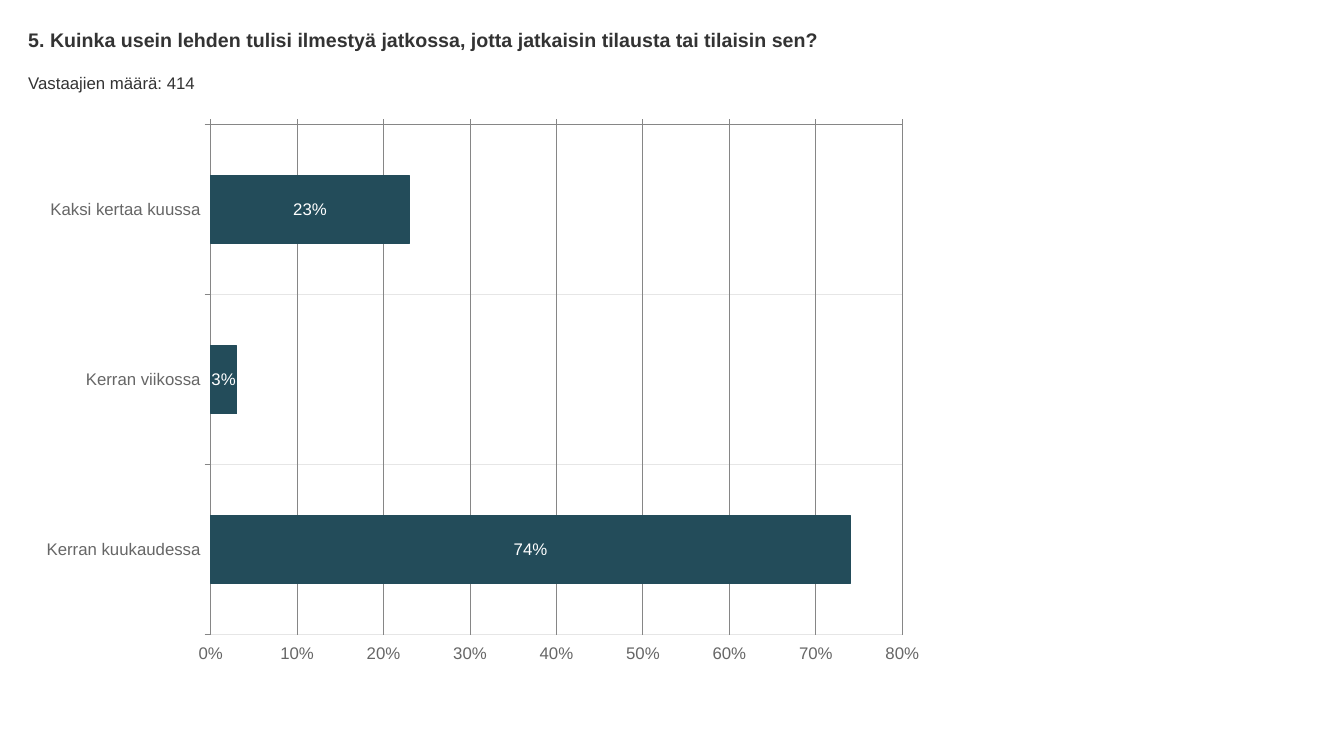
import pptx
import pptx.chart.data
import pptx.dml.color
import pptx.enum.chart
import pptx.enum.text
import pptx.oxml
import pptx.oxml.ns
import pptx.util
from pptx.util import Inches

RGBColor = pptx.dml.color.RGBColor
TEXT = RGBColor(0x33, 0x33, 0x33)
AXIS_TEXT = RGBColor(0x66, 0x66, 0x66)
AXIS_LINE = RGBColor(0x86, 0x86, 0x86)
PALE_GRID = RGBColor(0xE6, 0xE6, 0xE6)
TEAL = RGBColor(0x23, 0x4C, 0x5A)
WHITE = RGBColor(0xFF, 0xFF, 0xFF)

QUESTION = "5. Kuinka usein lehden tulisi ilmestyä jatkossa, jotta jatkaisin tilausta tai tilaisin sen?"
RESPONDENTS = "Vastaajien määrä: 414"
ANSWERS = [
    ("Kaksi kertaa kuussa", 0.23),
    ("Kerran viikossa", 0.03),
    ("Kerran kuukaudessa", 0.74),
]
LEFT = 0.28
TEXT_WIDTH = 12.78
CHART_BOX = (LEFT, 1.13, 9.03, 5.56)
PLOT_BOX = (2.09, 1.24, 6.86, 5.06)


def set_font(font, size, color, bold=False):
    font.name = "Arial"
    font.size = pptx.util.Pt(size)
    font.bold = bold
    font.color.rgb = color


def write_line(box, top, height, text, size, bold=False):
    box.left, box.top = Inches(LEFT), Inches(top)
    box.width, box.height = Inches(TEXT_WIDTH), Inches(height)
    frame = box.text_frame
    frame.margin_left = frame.margin_top = frame.margin_right = frame.margin_bottom = 0
    frame.word_wrap = True
    frame.auto_size = pptx.enum.text.MSO_AUTO_SIZE.SHAPE_TO_FIT_TEXT
    frame.vertical_anchor = pptx.enum.text.MSO_ANCHOR.TOP
    paragraph = frame.paragraphs[0]
    paragraph.alignment = pptx.enum.text.PP_ALIGN.LEFT
    paragraph.line_spacing = 1.0
    paragraph.space_before = pptx.util.Pt(0)
    run = paragraph.add_run()
    run.text = text
    set_font(run.font, size, TEXT, bold)


def style_axis(axis, label_position, grid_color):
    axis.tick_label_position = label_position
    axis.major_tick_mark = pptx.enum.chart.XL_TICK_MARK.OUTSIDE
    axis.minor_tick_mark = pptx.enum.chart.XL_TICK_MARK.NONE
    axis.has_major_gridlines = True
    set_font(axis.tick_labels.font, 12, AXIS_TEXT)
    for line, color in ((axis.format.line, AXIS_LINE), (axis.major_gridlines.format.line, grid_color)):
        line.color.rgb = color
        line.width = pptx.util.Pt(0.75)


def place_plot(chart):
    chart_left, chart_top, chart_width, chart_height = CHART_BOX
    left, top, width, height = PLOT_BOX
    fractions = {
        "x": (left - chart_left) / chart_width,
        "y": (top - chart_top) / chart_height,
        "w": width / chart_width,
        "h": height / chart_height,
    }
    modes = '<c:layoutTarget val="inner"/><c:xMode val="edge"/><c:yMode val="edge"/>'
    values = "".join(f'<c:{key} val="{value:.4f}"/>' for key, value in fractions.items())
    layout = pptx.oxml.parse_xml(
        f'<c:layout {pptx.oxml.ns.nsdecls("c")}><c:manualLayout>{modes}{values}</c:manualLayout></c:layout>'
    )
    plot_area = chart.element.find(".//" + pptx.oxml.ns.qn("c:plotArea"))
    for old_layout in plot_area.findall(pptx.oxml.ns.qn("c:layout")):
        plot_area.remove(old_layout)
    plot_area.insert(0, layout)


def add_answer_chart(slide):
    data = pptx.chart.data.CategoryChartData(number_format="0%")
    data.categories = [answer for answer, share in ANSWERS]
    data.add_series("Series 1", [share for answer, share in ANSWERS])
    chart = slide.shapes.add_chart(
        pptx.enum.chart.XL_CHART_TYPE.BAR_CLUSTERED, *map(Inches, CHART_BOX), data
    ).chart
    chart.has_legend = False
    chart.has_title = False
    chart.font.name = "Calibri"
    chart.font.size = pptx.util.Pt(14)

    positions = pptx.enum.chart.XL_TICK_LABEL_POSITION
    style_axis(chart.category_axis, positions.LOW, PALE_GRID)
    chart.category_axis.reverse_order = True
    style_axis(chart.value_axis, positions.HIGH, AXIS_LINE)
    chart.value_axis.minimum_scale = 0
    chart.value_axis.maximum_scale = 0.8
    chart.value_axis.major_unit = 0.1
    chart.value_axis.tick_labels.number_format = "0%"
    chart.value_axis.tick_labels.number_format_is_linked = False

    plot = chart.plots[0]
    plot.gap_width = 150
    plot.vary_by_categories = False
    shares = plot.series[0]
    shares.format.fill.solid()
    shares.format.fill.fore_color.rgb = TEAL
    shares.format.line.color.rgb = TEAL
    shares.format.line.width = pptx.util.Pt(0.75)
    labels = shares.data_labels
    labels.show_value = True
    labels.number_format = "0%"
    labels.number_format_is_linked = False
    labels.position = pptx.enum.chart.XL_LABEL_POSITION.CENTER
    set_font(labels.font, 12, WHITE)
    place_plot(chart)


def main():
    deck = pptx.Presentation()
    deck.slide_width, deck.slide_height = Inches(13.33), Inches(7.5)
    slide = deck.slides.add_slide(deck.slide_layouts[5])
    write_line(slide.shapes.title, 0.28, 0.23, QUESTION, 14, True)
    respondents = slide.shapes.add_textbox(0, 0, 0, 0)
    write_line(respondents, 0.72, 0.2, RESPONDENTS, 12)
    add_answer_chart(slide)
    deck.save("out.pptx")


if __name__ == "__main__":
    main()
